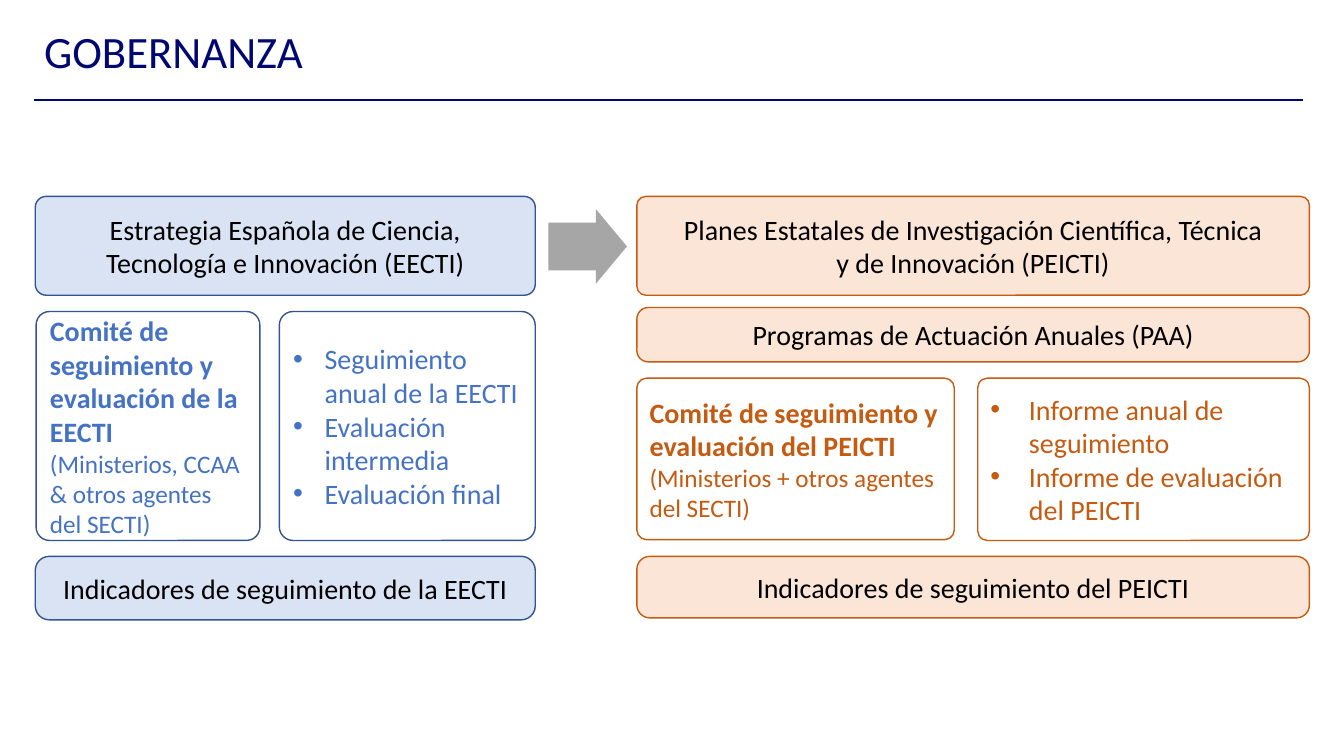
"""Build the GOBERNANZA slide."""
from lxml.etree import SubElement
from pptx import Presentation
from pptx.dml.color import RGBColor
from pptx.enum.shapes import MSO_CONNECTOR, MSO_SHAPE
from pptx.enum.text import MSO_ANCHOR, PP_ALIGN
from pptx.oxml.ns import qn
from pptx.util import Cm, Pt

NAVY = RGBColor(0x00, 0x07, 0x71)
BLUE = RGBColor(0x44, 0x72, 0xC4)
BLUE_LINE = RGBColor(0x32, 0x54, 0x91)
BLUE_FILL = RGBColor(0xDA, 0xE3, 0xF3)
ORANGE = RGBColor(0xC5, 0x5A, 0x11)
ORANGE_FILL = RGBColor(0xFB, 0xE5, 0xD6)
GREY = RGBColor(0xA6, 0xA6, 0xA6)
BLACK = RGBColor(0x00, 0x00, 0x00)

BODY = {"name": "Calibri", "size": Pt(20), "bold": False}
STRONG = {**BODY, "bold": True}
DETAIL = {**BODY, "size": Pt(18)}
TITLE = {**BODY, "size": Pt(32)}

LEFT_X, LEFT_W = 0.89, 12.6
RIGHT_X, RIGHT_W = 16.05, 16.95
HEAD_Y, HEAD_H = 4.95, 2.49
FOOT_Y = 14.02


def style(r, fmt, color):
    """Apply a dict of font values and a colour to a run."""
    for key, value in fmt.items():
        setattr(r.font, key, value)
    r.font.color.rgb = color


def add_title(s, text):
    """Add the slide title and the rule below it."""
    tf = s.shapes.add_textbox(Cm(0.86), Cm(0.48), Cm(26.62), Cm(1.63)).text_frame
    tf.word_wrap = True
    tf.text = text
    style(tf.paragraphs[0].runs[0], TITLE, NAVY)
    rule = s.shapes.add_connector(MSO_CONNECTOR.STRAIGHT, Cm(0.86), Cm(2.52), Cm(32.84), Cm(2.52))
    rule.line.color.rgb = NAVY
    rule.line.width = Pt(1.5)
    SubElement(rule._element.spPr, qn("a:effectLst"))


def add_box(s, box, adj, line, fill=None):
    """Add a rounded box and return its text frame."""
    sp = s.shapes.add_shape(MSO_SHAPE.ROUNDED_RECTANGLE, *map(Cm, box))
    sp.adjustments[0] = adj
    sp.shadow.inherit = False
    sp.line.color.rgb = line
    sp.line.width = Pt(1)
    if fill is None:
        sp.fill.background()
    else:
        sp.fill.solid()
        sp.fill.fore_color.rgb = fill
    tf = sp.text_frame
    tf.word_wrap = True
    tf.vertical_anchor = MSO_ANCHOR.MIDDLE
    return tf


def add_band(s, box, adj, line, fill, text):
    """Add a filled box with a centred label."""
    p = add_box(s, box, adj, line, fill).paragraphs[0]
    p.text = text
    p.alignment = PP_ALIGN.CENTER
    for r in p.runs:
        style(r, BODY, BLACK)


def add_committee(s, box, line, color, name, members):
    """Add a box with a bold committee name and its members below."""
    tf = add_box(s, box, 0.06, line)
    for p, text, fmt in ((tf.paragraphs[0], name, STRONG), (tf.add_paragraph(), members, DETAIL)):
        p.alignment = PP_ALIGN.LEFT
        r = p.add_run()
        r.text = text
        style(r, fmt, color)


def add_bullets(s, box, line, color, indent, items):
    """Add a box with a bulleted list."""
    tf = add_box(s, box, 0.06, line)
    for i, item in enumerate(items):
        p = tf.add_paragraph() if i else tf.paragraphs[0]
        p.alignment = PP_ALIGN.LEFT
        pPr = p._p.get_or_add_pPr()
        pPr.set("marL", str(Cm(indent)))
        pPr.set("indent", str(-Cm(indent)))
        SubElement(pPr, qn("a:buFont")).set("typeface", "Arial")
        SubElement(pPr, qn("a:buChar")).set("char", "•")
        r = p.add_run()
        r.text = item
        style(r, BODY, color)


def add_arrow(s, box):
    """Add the grey arrow between the two columns."""
    sp = s.shapes.add_shape(MSO_SHAPE.RIGHT_ARROW, *map(Cm, box))
    sp.adjustments[0] = 0.64
    sp.adjustments[1] = 0.416
    sp.shadow.inherit = False
    sp.fill.solid()
    sp.fill.fore_color.rgb = GREY
    sp.line.fill.background()


def main():
    """Build and save the slide."""
    prs = Presentation()
    prs.slide_width, prs.slide_height = Cm(33.87), Cm(19.05)
    s = prs.slides.add_slide(prs.slide_layouts[6])
    add_title(s, "GOBERNANZA")

    for box, adj, text in (
        ((LEFT_X, HEAD_Y, LEFT_W, HEAD_H), 0.11,
         "Estrategia Española de Ciencia, Tecnología e Innovación (EECTI)"),
        ((LEFT_X, FOOT_Y, LEFT_W, 1.6), 0.22, "Indicadores de seguimiento de la EECTI"),
    ):
        add_band(s, box, adj, BLUE_LINE, BLUE_FILL, text)
    add_committee(s, (0.91, 7.85, 5.64, 5.77), BLUE_LINE, BLUE,
                  "Comité de seguimiento y evaluación de la EECTI",
                  "(Ministerios, CCAA & otros agentes del SECTI)")
    add_bullets(s, (7.04, 7.85, 6.45, 5.77), BLUE_LINE, BLUE, 0.79,
                ("Seguimiento anual de la EECTI", "Evaluación intermedia", "Evaluación final"))

    add_arrow(s, (13.82, 5.27, 1.98, 1.88))

    for box, adj, text in (
        ((RIGHT_X, HEAD_Y, RIGHT_W, HEAD_H), 0.09,
         "Planes Estatales de Investigación Científica, Técnica\vy de Innovación (PEICTI)"),
        ((RIGHT_X, 7.75, RIGHT_W, 1.37), 0.21, "Programas de Actuación Anuales (PAA)"),
        ((RIGHT_X, FOOT_Y, RIGHT_W, 1.55), 0.21, "Indicadores de seguimiento del PEICTI"),
    ):
        add_band(s, box, adj, ORANGE, ORANGE_FILL, text)
    add_committee(s, (RIGHT_X, 9.53, 8, 4.07), ORANGE, ORANGE,
                  "Comité de seguimiento y evaluación del PEICTI",
                  "(Ministerios + otros agentes del SECTI)")
    add_bullets(s, (24.64, 9.53, 8.36, 4.09), ORANGE, ORANGE, 0.97,
                ("Informe anual de seguimiento", "Informe de evaluación del PEICTI"))

    prs.save("out.pptx")


if __name__ == "__main__":
    main()
